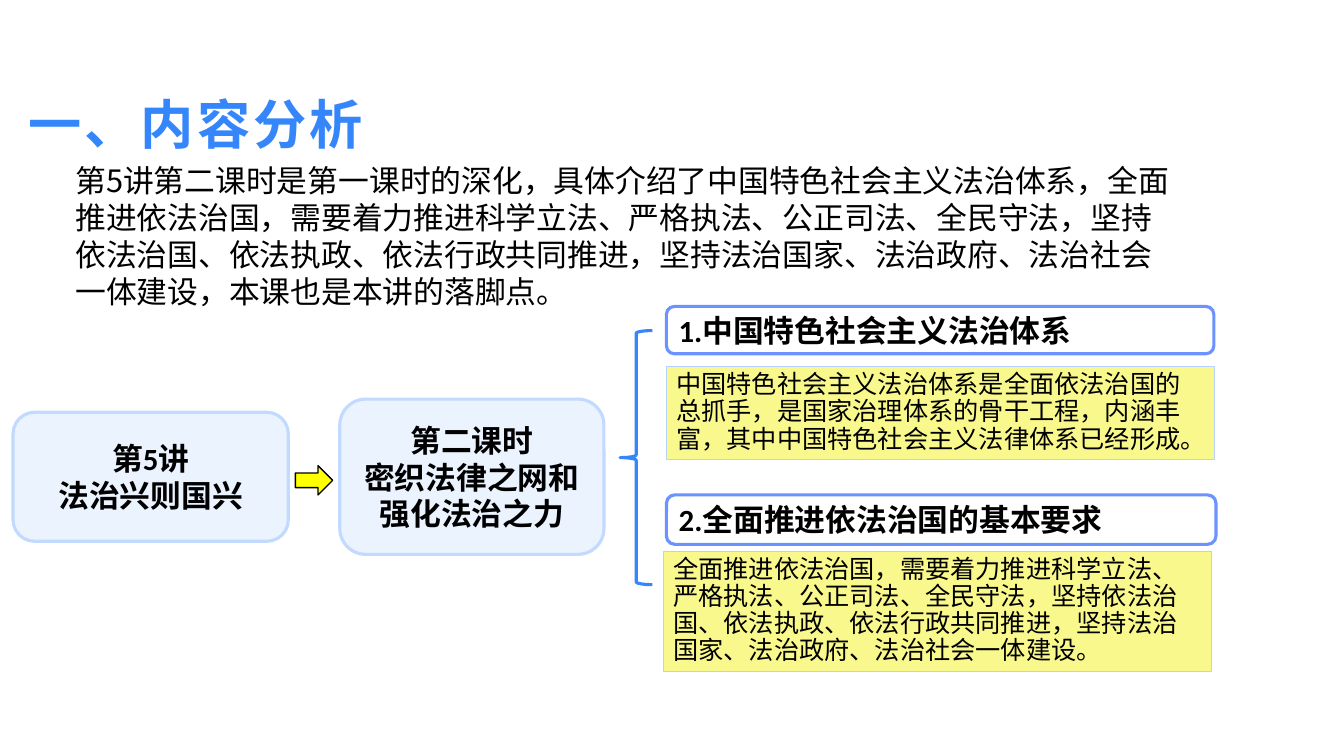
from dataclasses import dataclass

from lxml import etree
from pptx import Presentation
from pptx import util as u
from pptx.dml.color import RGBColor
from pptx.enum import shapes, text
from pptx.oxml.ns import qn
from pptx.shapes.autoshape import Shape
from pptx.text.text import TextFrame

BLUE = RGBColor(0x35, 0x86, 0xFB)
BLACK = RGBColor(0, 0, 0)
PALE_BLUE = RGBColor(0xEB, 0xF3, 0xFF)
LIGHT_BLUE = RGBColor(0xC2, 0xDA, 0xFE)
HEADING_BLUE = RGBColor(0x6C, 0x92, 0xFD)
NOTE_BLUE = RGBColor(0xB9, 0xD2, 0xFD)
NOTE_YELLOW = RGBColor(0xF9, 0xF8, 0x8C)
YELLOW = RGBColor(0xFF, 0xFF, 0)
CHINESE_FONT = "Noto Sans CJK SC"

KIND = shapes.MSO_SHAPE
ALIGN = text.PP_ALIGN
ANCHOR = text.MSO_ANCHOR
FIT = text.MSO_AUTO_SIZE


@dataclass(frozen=True)
class Style:
    size: float
    font: str
    color: RGBColor = BLACK
    bold: bool = False
    align: ALIGN = ALIGN.LEFT
    anchor: ANCHOR = ANCHOR.MIDDLE
    fit: FIT = FIT.NONE
    line_spacing: float = 1.0
    letter_spacing: float = 0


@dataclass(frozen=True)
class Look:
    kind: KIND
    fill: RGBColor | None
    line: RGBColor
    width: float
    style: Style | None = None


@dataclass(frozen=True)
class Item:
    look: Look
    left: float
    top: float
    width: float
    height: float
    lines: tuple[str, ...] = ()


TITLE = Style(38, CHINESE_FONT, BLUE, True, anchor=ANCHOR.BOTTOM, letter_spacing=2.2)
INTRO = Style(22, CHINESE_FONT, anchor=ANCHOR.TOP, fit=FIT.SHAPE_TO_FIT_TEXT)
TOPIC_TEXT = Style(22, "Calibri", bold=True, align=ALIGN.CENTER)
HEADING_TEXT = Style(22, "Calibri", bold=True)
NOTE_TEXT = Style(18, "Arial", anchor=ANCHOR.TOP, fit=FIT.SHAPE_TO_FIT_TEXT, line_spacing=0.9)

TOPIC = Look(KIND.ROUNDED_RECTANGLE, PALE_BLUE, LIGHT_BLUE, 2.25, TOPIC_TEXT)
HEADING = Look(KIND.ROUNDED_RECTANGLE, None, HEADING_BLUE, 2.25, HEADING_TEXT)
NOTE = Look(KIND.RECTANGLE, NOTE_YELLOW, NOTE_BLUE, 0.75, NOTE_TEXT)
BRACE = Look(KIND.LEFT_BRACE, None, BLUE, 2.25)
ARROW = Look(KIND.RIGHT_ARROW, YELLOW, BLACK, 1)

INTRO_LINE = (
    "第5讲第二课时是第一课时的深化，具体介绍了中国特色社会主义法治体系，"
    "全面推进依法治国，需要着力推进科学立法、严格执法、公正司法、全民守法，"
    "坚持依法治国、依法执政、依法行政共同推进，坚持法治国家、法治政府、"
    "法治社会一体建设，本课也是本讲的落脚点。"
)
SYSTEM_NOTE = (
    "中国特色社会主义法治体系是全面依法治国的总抓手，是国家治理体系的骨干工程，"
    "内涵丰富，其中中国特色社会主义法律体系已经形成。"
)
REQUIREMENT_NOTE = (
    "全面推进依法治国，需要着力推进科学立法、严格执法、公正司法、全民守法，"
    "坚持依法治国、依法执政、依法行政共同推进，坚持法治国家、法治政府、"
    "法治社会一体建设。"
)

ITEMS = (
    Item(TOPIC, 0.13, 4.09, 2.73, 1.28, ("第5讲", "法治兴则国兴")),
    Item(TOPIC, 3.37, 3.96, 2.62, 1.54, ("第二课时", "密织法律之网和强化法治之力")),
    Item(BRACE, 6.15, 3.28, 0.32, 2.52),
    Item(HEADING, 6.61, 3.04, 5.43, 0.47, ("1.中国特色社会主义法治体系",)),
    Item(HEADING, 6.61, 4.91, 5.45, 0.49, ("2.全面推进依法治国的基本要求",)),
    Item(ARROW, 2.93, 4.62, 0.37, 0.29),
    Item(NOTE, 6.61, 3.64, 5.44, 0.92, (SYSTEM_NOTE,)),
    Item(NOTE, 6.58, 5.47, 5.44, 1.19, (REQUIREMENT_NOTE,)),
)


def write(frame: TextFrame, lines: tuple[str, ...], style: Style) -> None:
    frame.word_wrap = True
    frame.auto_size = style.fit
    frame.vertical_anchor = style.anchor
    for index, line in enumerate(lines):
        para = frame.add_paragraph() if index else frame.paragraphs[0]
        para.alignment = style.align
        para.line_spacing = style.line_spacing
        span = para.add_run()
        span.text = line
        span.font.size = u.Pt(style.size)
        span.font.bold = style.bold
        span.font.color.rgb = style.color
        span.font.name = style.font
        properties = span.font._element
        etree.SubElement(properties, qn("a:ea")).set("typeface", CHINESE_FONT)
        if style.letter_spacing:
            properties.set("spc", str(round(style.letter_spacing * 100)))


def draw(page, item: Item) -> Shape:
    look = item.look
    place = map(u.Inches, (item.left, item.top, item.width, item.height))
    box = page.shapes.add_shape(look.kind, *place)
    box.shadow.inherit = False
    if look.fill is None:
        box.fill.background()
    else:
        box.fill.solid()
        box.fill.fore_color.rgb = look.fill
    box.line.color.rgb = look.line
    box.line.width = u.Pt(look.width)
    if look.style:
        write(box.text_frame, item.lines, look.style)
    return box


def main() -> None:
    deck = Presentation()
    deck.slide_width, deck.slide_height = u.Inches(13.33), u.Inches(7.5)
    page = deck.slides.add_slide(deck.slide_layouts.get_by_name("Title Only"))

    title = page.shapes.title
    title.left, title.top = u.Inches(0.21), u.Inches(0.8)
    title.width, title.height = u.Inches(6.37), u.Inches(0.77)
    frame = title.text_frame
    frame.margin_left = frame.margin_right = u.Inches(0.07)
    frame.margin_top = frame.margin_bottom = u.Inches(0.03)
    write(frame, ("一、内容分析",), TITLE)

    intro = page.shapes.add_textbox(*map(u.Inches, (0.65, 1.56, 11.14, 1.58)))
    write(intro.text_frame, (INTRO_LINE,), INTRO)

    for item in ITEMS:
        draw(page, item)

    deck.save("out.pptx")


if __name__ == "__main__":
    main()
